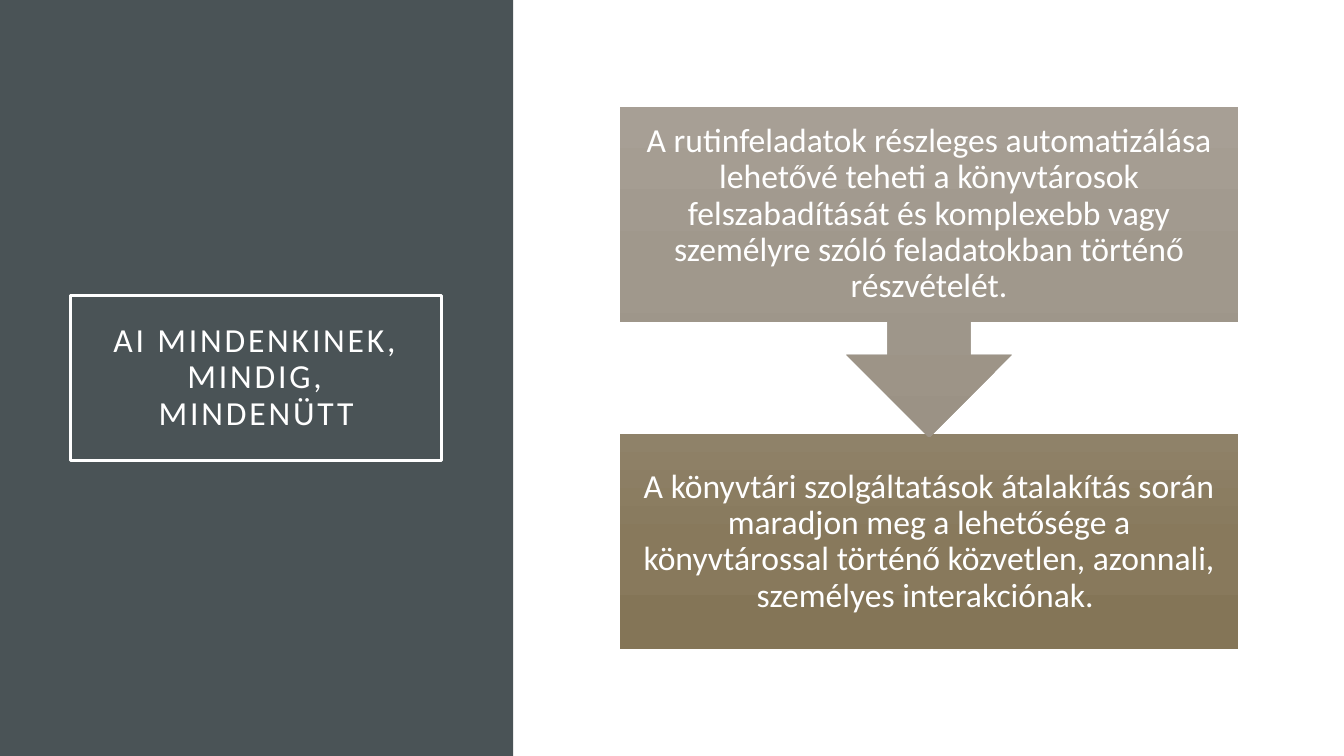
"""Build a slide with a framed title beside two linked statements."""
import copy

import pptx
import pptx.dml.color
import pptx.enum.shapes
import pptx.enum.text
import pptx.oxml.ns
import pptx.util

EMU_PER_PX = 9144
WHITE = pptx.dml.color.RGBColor(0xFF, 0xFF, 0xFF)
SLATE = pptx.dml.color.RGBColor(0x4A, 0x53, 0x56)
STONE_GRADIENT = (
    pptx.dml.color.RGBColor(0xA7, 0x9F, 0x95),
    pptx.dml.color.RGBColor(0xA0, 0x98, 0x8C),
    pptx.dml.color.RGBColor(0x9B, 0x92, 0x85),
)
OLIVE_GRADIENT = (
    pptx.dml.color.RGBColor(0x8F, 0x82, 0x69),
    pptx.dml.color.RGBColor(0x88, 0x79, 0x5C),
    pptx.dml.color.RGBColor(0x84, 0x75, 0x57),
)
SHAPES = pptx.enum.shapes.MSO_SHAPE


def px(length):
    """Turn pixels into EMU."""
    return pptx.util.Emu(length * EMU_PER_PX)


def add_block(slide, kind, left, top, width, height):
    """Add a preset shape with no shadow, fill or line."""
    shape = slide.shapes.add_shape(kind, px(left), px(top), px(width), px(height))
    shape.shadow.inherit = False
    shape.fill.background()
    shape.line.fill.background()
    return shape


def fill_gradient(shape, colors):
    """Fill a shape from top to bottom with three evenly spaced colours."""
    shape.fill.gradient()
    shape.fill.gradient_angle = 270
    first_stop = next(shape._element.spPr.iter(pptx.oxml.ns.qn("a:gs")))
    first_stop.addnext(copy.deepcopy(first_stop))
    for index, (stop, color) in enumerate(zip(shape.fill.gradient_stops, colors)):
        stop.position = index / 2
        stop.color.rgb = color


def write_text(shape, text, size=24, color=WHITE, inset=19, spacing=0):
    """Write centred text into a shape."""
    frame = shape.text_frame
    frame.word_wrap = True
    frame.vertical_anchor = pptx.enum.text.MSO_ANCHOR.MIDDLE
    frame.margin_left = frame.margin_right = px(inset)
    frame.margin_top = frame.margin_bottom = px(inset)
    paragraph = frame.paragraphs[0]
    paragraph.alignment = pptx.enum.text.PP_ALIGN.CENTER
    paragraph.line_spacing = 0.9
    run = paragraph.add_run()
    run.text = text
    run.font.name = "Calibri"
    run.font.size = pptx.util.Pt(size)
    run.font.color.rgb = color
    if spacing:
        run._r.get_or_add_rPr().set("spc", str(spacing * 100))


def add_title_panel(slide):
    """Add the dark side panel with its framed title."""
    panel = add_block(slide, SHAPES.RECTANGLE, 0, 0, 509, 750)
    panel.fill.solid()
    panel.fill.fore_color.rgb = SLATE
    title = add_block(slide, SHAPES.RECTANGLE, 70, 293, 368, 164)
    title.line.color.rgb = WHITE
    title.line.width = pptx.util.Pt(2.5)
    write_text(title, "AI MINDENKINEK, MINDIG, MINDENÜTT", inset=20, spacing=2)


def add_statement(slide, kind, top, height, colors, text):
    """Add one statement of the right-hand flow."""
    statement = add_block(slide, kind, 615, top, 613, height)
    fill_gradient(statement, colors)
    write_text(statement, text)


def main():
    """Build and save the presentation."""
    presentation = pptx.Presentation()
    presentation.slide_width = px(1333)
    presentation.slide_height = px(750)
    slide = presentation.slides.add_slide(presentation.slide_layouts[6])
    add_title_panel(slide)
    add_statement(
        slide, SHAPES.RECTANGLE, 431, 213, OLIVE_GRADIENT,
        "A könyvtári szolgáltatások átalakítás során maradjon meg a lehetősége a "
        "könyvtárossal történő közvetlen, azonnali, személyes interakciónak. ",
    )
    add_statement(
        slide, SHAPES.DOWN_ARROW_CALLOUT, 106, 328, STONE_GRADIENT,
        "A rutinfeladatok részleges automatizálása lehetővé teheti a könyvtárosok "
        "felszabadítását és komplexebb vagy személyre szóló feladatokban történő "
        "részvételét.",
    )
    presentation.save("out.pptx")


if __name__ == "__main__":
    main()
